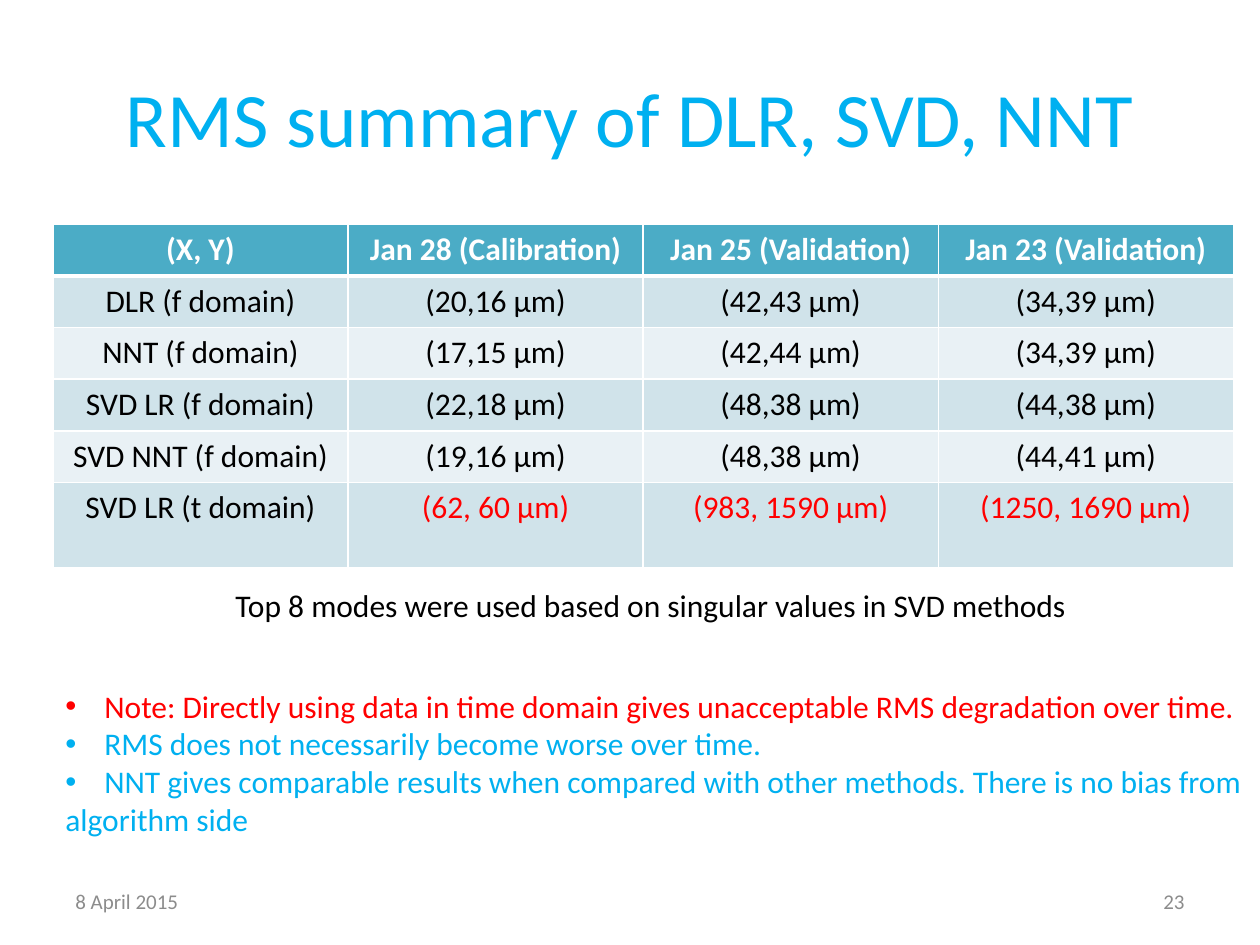
import pptx
import pptx.dml.color
import pptx.enum.text
import pptx.oxml
import pptx.oxml.ns
import pptx.util
from pptx.util import Inches

ALIGN = pptx.enum.text.PP_ALIGN
ANCHOR = pptx.enum.text.MSO_ANCHOR
FIT = pptx.enum.text.MSO_AUTO_SIZE

SKY, RED, BLACK, WHITE, GREY = "00B0F0", "FF0000", "000000", "FFFFFF", "8C8C8C"
HEADER_FILL, BANDS = "4BACC6", ("E9F1F5", "D0E3EA")
ROW_HEIGHT, LAST_ROW_HEIGHT = 0.41, 0.68

RESULTS = [
    ["(X, Y)", "Jan 28 (Calibration)", "Jan 25 (Validation)", "Jan 23 (Validation)"],
    ["DLR (f domain)", "(20,16 µm)", "(42,43 µm)", "(34,39 µm)"],
    ["NNT (f domain)", "(17,15 µm)", "(42,44 µm)", "(34,39 µm)"],
    ["SVD LR (f domain)", "(22,18 µm)", "(48,38 µm)", "(44,38 µm)"],
    ["SVD NNT (f domain)", "(19,16 µm)", "(48,38 µm)", "(44,41 µm)"],
    ["SVD LR (t domain)", "(62, 60 µm)", "(983, 1590 µm)", "(1250, 1690 µm)"],
]

# text, colour, bulleted
FINDINGS = [
    ("Note: Directly using data in time domain gives unacceptable RMS degradation over time.", RED, True),
    ("RMS does not necessarily become worse over time.", SKY, True),
    ("NNT gives comparable results when compared with other methods. There is no bias from", SKY, True),
    ("algorithm side", SKY, False),
]


def rgb(hex_colour):
    return pptx.dml.color.RGBColor.from_string(hex_colour)


def parse_element(tag, attributes="", content=""):
    """Build one DrawingML element."""
    namespace = pptx.oxml.ns.nsdecls("a")
    return pptx.oxml.parse_xml(f"<a:{tag} {namespace} {attributes}>{content}</a:{tag}>")


class SlideBuilder:
    def __init__(self, slide, font="Calibri", size=18):
        self.slide = slide
        self.font = font
        self.size = size

    def run(self, paragraph, text, colour, size=None, bold=False):
        run = paragraph.add_run()
        run.text = text
        run.font.name = self.font
        run.font.size = pptx.util.Pt(size or self.size)
        run.font.bold = bold
        run.font.color.rgb = rgb(colour)

    def bullet(self, paragraph):
        properties = paragraph._p.get_or_add_pPr()
        indent = Inches(0.31)
        properties.set("marL", str(indent))
        properties.set("indent", str(-indent))
        properties.append(parse_element("buFont", 'typeface="Arial"'))
        properties.append(parse_element("buChar", 'char="•"'))

    def text(self, box, lines, size=None, align=ALIGN.LEFT, anchor=ANCHOR.TOP, wrap=True):
        """Add a text box; each line is (text, colour, bulleted)."""
        frame = self.slide.shapes.add_textbox(*map(Inches, box)).text_frame
        frame.word_wrap = wrap
        frame.auto_size = FIT.NONE if wrap else FIT.SHAPE_TO_FIT_TEXT
        frame.vertical_anchor = anchor
        for index, (text, colour, bulleted) in enumerate(lines):
            paragraph = frame.add_paragraph() if index else frame.paragraphs[0]
            paragraph.alignment = align
            if bulleted:
                self.bullet(paragraph)
            self.run(paragraph, text, colour, size)

    def border(self, cell, side, points):
        line = '<a:solidFill><a:srgbClr val="%s"/></a:solidFill>' % WHITE
        width = f'w="{pptx.util.Pt(points)}"'
        cell._tc.get_or_add_tcPr().append(parse_element(f"ln{side}", width, line))

    def cell(self, cell, text, fill, colour, edges, bold):
        for side, points in edges.items():
            self.border(cell, side, points)
        cell.fill.solid()
        cell.fill.fore_color.rgb = rgb(fill)
        paragraph = cell.text_frame.paragraphs[0]
        paragraph.alignment = ALIGN.CENTER
        self.run(paragraph, text, colour, bold=bold)

    def table(self, box, rows):
        frame = self.slide.shapes.add_table(len(rows), len(rows[0]), *map(Inches, box))
        table = frame.table
        last = len(rows) - 1
        for r, row in enumerate(rows):
            table.rows[r].height = Inches(LAST_ROW_HEIGHT if r == last else ROW_HEIGHT)
            header = r == 0
            edges = {"L": 1, "R": 1, "T": 3 if r == 1 else 1, "B": 3 if header else 1}
            fill = HEADER_FILL if header else BANDS[r % 2]
            for c, text in enumerate(row):
                colour = WHITE if header else RED if r == last and c else BLACK
                self.cell(table.cell(r, c), text, fill, colour, edges, header)


def main():
    deck = pptx.Presentation()
    deck.slide_width, deck.slide_height = Inches(10), Inches(7.5)
    page = SlideBuilder(deck.slides.add_slide(deck.slide_layouts[6]))

    page.text((0.5, 0.3, 9, 1.25), [("RMS summary of DLR, SVD, NNT", SKY, False)],
              size=44, align=ALIGN.CENTER, anchor=ANCHOR.MIDDLE)
    page.table((0.42, 1.78, 9.37, 2.73), RESULTS)
    for left, label, align in [(0.5, "8 April 2015", ALIGN.LEFT), (7.17, "23", ALIGN.RIGHT)]:
        page.text((left, 6.95, 2.33, 0.4), [(label, GREY, False)],
                  size=12, align=align, anchor=ANCHOR.MIDDLE)
    page.text((0.42, 5.4, 9.71, 1.31), FINDINGS, wrap=False)
    page.text((1.77, 4.6, 6.88, 0.4),
              [("Top 8 modes were used based on singular values in SVD methods", BLACK, False)],
              wrap=False)

    deck.save("out.pptx")


if __name__ == "__main__":
    main()
